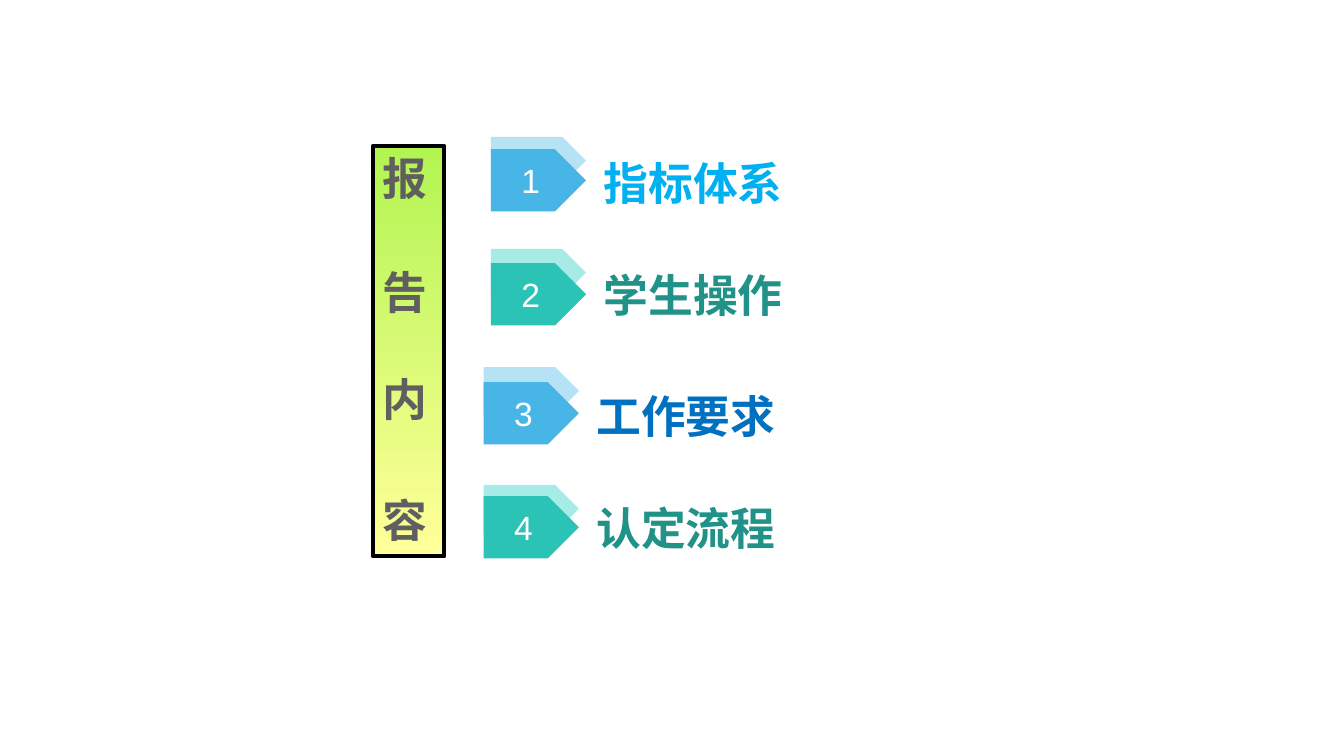
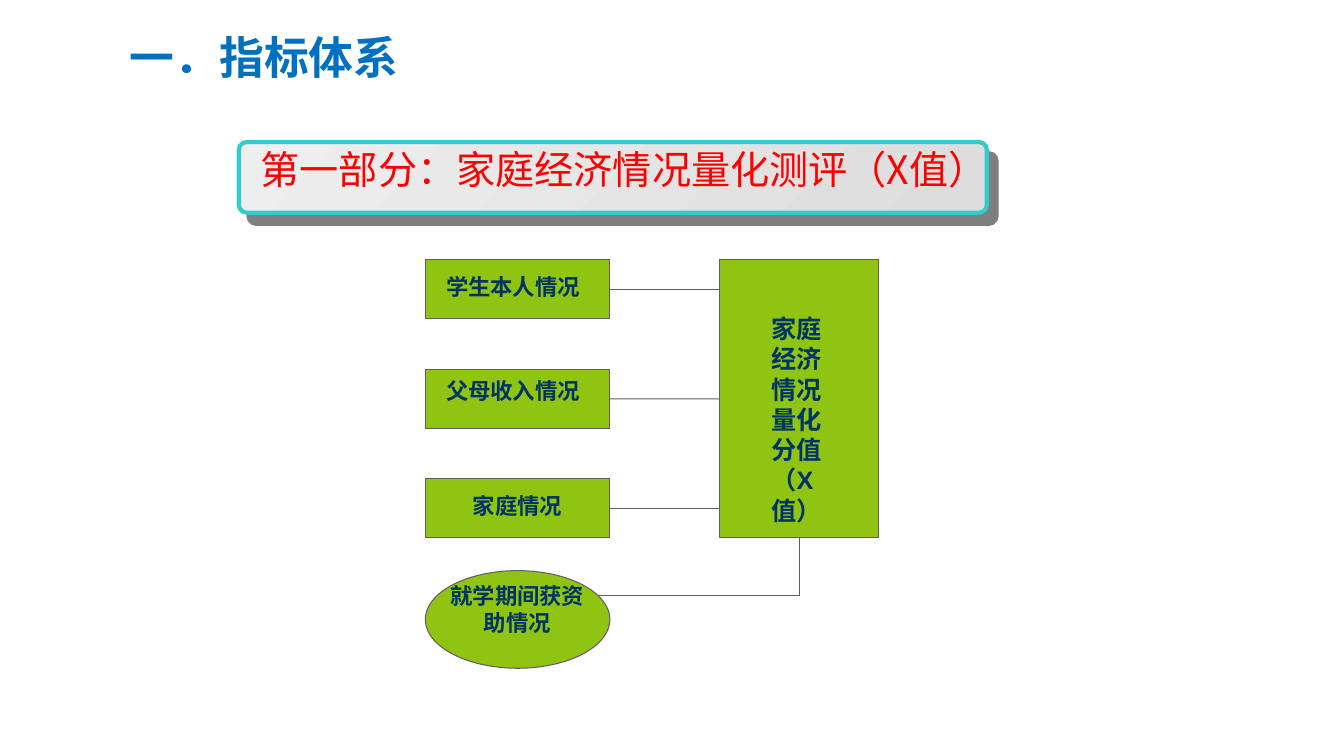
"""Build a contents slide and an index-system diagram slide."""
from pptx import Presentation
from pptx.dml.color import RGBColor
from pptx.enum.shapes import MSO_CONNECTOR, MSO_SHAPE
from pptx.enum.text import MSO_ANCHOR, PP_ALIGN
from pptx.oxml import parse_xml
from pptx.oxml.ns import nsdecls
from pptx.util import Cm, Pt

COLORS = {
    "lime": "B2F552", "cream": "FFFF99", "black": "000000", "gray": "5F5F5F",
    "white": "FFFFFF", "sky": "47B6E7", "pale_sky": "B5E2F5",
    "teal": "2BC3B5", "pale_teal": "A6EBE5", "cyan": "00B0F0",
    "blue": "0070C0", "dark_teal": "209288", "green": "90C413",
    "navy": "003366", "red": "FF0000", "aqua": "33CCCC",
    "silver": "EEEEEE", "silver_dark": "DDDDDD",
}
LATIN, CJK = "Arial", "Noto Sans CJK SC"

HEADING = [("报", 0), ("告", 43), ("内", 38), ("容", 48)]
AGENDA = [
    ("指标体系", "cyan", "sky", 12.37, 3.45, 3.76, 3.4),
    ("学生操作", "dark_teal", "teal", 12.37, 6.27, 6.63, 6.2),
    ("工作要求", "blue", "sky", 12.19, 9.25, 9.63, 9.25),
    ("认定流程", "dark_teal", "teal", 12.19, 12.22, 12.5, 12.07),
]
TITLE = "一．指标体系"
PART = "第一部分：家庭经济情况量化测评（X值）"
FACTORS = [
    ("学生本人情况", (0.46, 0.33, 0.69, 0)),
    ("父母收入情况", (0.46, 0.2, 0.69, 0)),
    ("家庭情况", (0.46, 0.33, 0.46, 0)),
]
RESULT = "家庭经济情况量化分值（X值）"
AID = "就学期间获资助情况"

FACTOR_X, FACTOR_Y, FACTOR_W, FACTOR_H, FACTOR_STEP = 10.72, 6.55, 4.65, 1.48, 2.76
RESULT_X, RESULT_W = 18.14, 4.01
RESULT_H = FACTOR_STEP * (len(FACTORS) - 1) + FACTOR_H
ELBOW_Y, ELBOW_END = 15.01, 14.73


def rgb(name):
    return RGBColor.from_string(COLORS[name])


def add_box(shapes, kind, box, fill, line=None, width=0.75):
    sp = shapes.add_shape(kind, *map(Cm, box))
    sp.shadow.inherit = False
    if isinstance(fill, tuple):
        *names, angle = fill
        sp.fill.gradient()
        sp.fill.gradient_angle = angle
        for stop, name in zip(sp.fill.gradient_stops, names):
            stop.color.rgb = rgb(name)
    else:
        sp.fill.solid()
        sp.fill.fore_color.rgb = rgb(fill)
    if line:
        sp.line.color.rgb = rgb(line)
        sp.line.width = Pt(width)
    else:
        sp.line.fill.background()
    return sp


def style(p, size, color, bold=True, font=LATIN, align=PP_ALIGN.LEFT):
    p.alignment = align
    p.font.name = font
    p.font.size = Pt(size)
    p.font.bold = bold
    p.font.color.rgb = rgb(color)


def set_text(sp, text, size, color, margins=(0.25, 0.13, 0.25, 0.13),
             anchor=MSO_ANCHOR.TOP, **kwargs):
    tf = sp.text_frame
    tf.word_wrap = True
    tf.vertical_anchor = anchor
    (tf.margin_left, tf.margin_top,
     tf.margin_right, tf.margin_bottom) = map(Cm, margins)
    p = tf.paragraphs[0]
    p.text = text
    style(p, size, color, **kwargs)
    return p


def add_text(shapes, box, *args, **kwargs):
    return set_text(shapes.add_textbox(*map(Cm, box)), *args, **kwargs)


def add_line(s, start, end, begin=None, finish=None):
    line = s.shapes.add_connector(MSO_CONNECTOR.STRAIGHT, *map(Cm, start + end))
    if begin:
        line.begin_connect(*begin)
    if finish:
        line.end_connect(*finish)
    line.line.color.rgb = rgb("gray")
    line.line.width = Pt(0.75)
    line._element.spPr.append(parse_xml(f"<a:effectLst {nsdecls('a')}/>"))


def build_agenda(s):
    bar = add_box(s.shapes, MSO_SHAPE.RECTANGLE, (9.4, 3.68, 1.8, 10.34),
                  ("lime", "cream", 270), "black", 3)
    first, *rest = HEADING
    set_text(bar, first[0], 32, "gray")
    for char, gap in rest:
        p = bar.text_frame.add_paragraph()
        p.text = char
        p.space_before = Pt(gap)
        style(p, 32, "gray")
    for number, (label, ink, fill, x, back_y, tag_y, label_y) in enumerate(AGENDA, 1):
        shapes = s.shapes.add_group_shape().shapes
        add_box(shapes, MSO_SHAPE.PENTAGON, (x, back_y, 2.4, 1.2), "pale_" + fill)
        tag = add_box(shapes, MSO_SHAPE.PENTAGON, (x, tag_y, 2.4, 1.57), fill)
        set_text(tag, str(number), 24, "white", anchor=MSO_ANCHOR.MIDDLE,
                 bold=False, align=PP_ALIGN.CENTER)
        p = add_text(shapes, (x + 2.59, label_y, 8.33, 2.03), label, 32, ink)
        p.line_spacing = 1.3


def build_index(s):
    add_text(s.shapes, (3.02, 0.61, 12.5, 2.03), TITLE, 32, "blue", font=CJK)
    banner = add_box(s.shapes, MSO_SHAPE.ROUNDED_RECTANGLE, (6.02, 3.58, 18.85, 1.78),
                     ("silver", "silver_dark", 315), "aqua", 3)
    banner.adjustments[0] = 0.11
    effects = banner._element.spPr.find("{*}effectLst")
    effects.append(parse_xml(
        f'<a:outerShdw {nsdecls("a")} blurRad="0" dist="134620" dir="2940000" '
        f'algn="ctr" rotWithShape="0"><a:srgbClr val="{COLORS["black"]}">'
        '<a:alpha val="50000"/></a:srgbClr></a:outerShdw>'))
    add_text(s.shapes, (6.32, 3.53, 21, 1.68), PART, 28, "red",
             bold=False, font=CJK)

    result = add_box(s.shapes, MSO_SHAPE.RECTANGLE,
                     (RESULT_X, FACTOR_Y, RESULT_W, RESULT_H), "green", "gray")
    set_text(result, RESULT, 18, "navy", (1.3, 1.35, 0.89, 0))
    for i, (label, margins) in enumerate(FACTORS):
        y = FACTOR_Y + i * FACTOR_STEP
        factor = add_box(s.shapes, MSO_SHAPE.RECTANGLE,
                         (FACTOR_X, y, FACTOR_W, FACTOR_H), "green", "gray")
        set_text(factor, label, 16, "navy", margins, align=PP_ALIGN.CENTER)
        middle = y + FACTOR_H / 2
        joint = (result, 1) if i == len(FACTORS) // 2 else None
        add_line(s, (FACTOR_X + FACTOR_W, middle), (RESULT_X, middle),
                 (factor, 3), joint)

    elbow = (RESULT_X + RESULT_W / 2, ELBOW_Y)
    add_line(s, (elbow[0], FACTOR_Y + RESULT_H), elbow, (result, 2))
    add_line(s, elbow, (ELBOW_END, ELBOW_Y))
    add_box(s.shapes, MSO_SHAPE.OVAL, (FACTOR_X, 14.38, FACTOR_W, 2.46), "green", "gray")
    add_text(s.shapes, (10.92, 14.55, 4.24, 1.63), AID, 16, "navy",
             align=PP_ALIGN.CENTER)


def main():
    prs = Presentation()
    prs.slide_width, prs.slide_height = Cm(33.87), Cm(19.05)
    for build in (build_agenda, build_index):
        build(prs.slides.add_slide(prs.slide_layouts[6]))
    prs.save("out.pptx")


if __name__ == "__main__":
    main()
